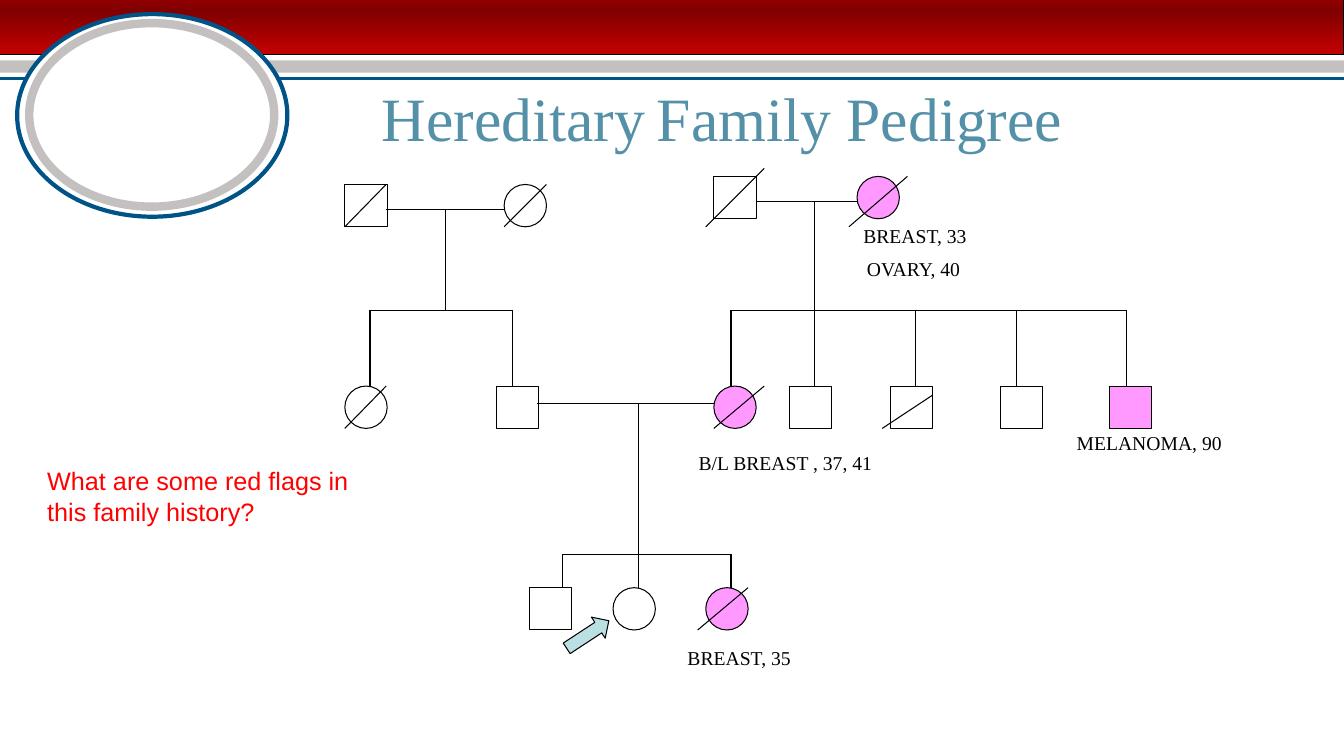
from copy import deepcopy
from dataclasses import dataclass

from lxml.etree import SubElement
from pptx import Presentation
from pptx.dml.color import RGBColor
from pptx.enum.shapes import MSO_CONNECTOR, MSO_SHAPE
from pptx.enum.text import PP_ALIGN
from pptx.oxml.ns import qn
from pptx.util import Inches, Pt


@dataclass(frozen=True)
class Theme:
    black: str = "000000"
    white: str = "FFFFFF"
    red: str = "C40101"
    mid_red: str = "900000"
    dark_red: str = "800000"
    grey: str = "C4C0C0"
    blue: str = "005387"
    affected: str = "FF99FF"
    arrow: str = "BBE0E3"
    title: str = "5490A8"
    question: str = "FF0000"
    serif: str = "Times New Roman"
    sans: str = "Arial"
    title_size: int = 44
    title_gap_size: int = 32
    question_size: int = 18
    label_size: int = 14
    thin: float = 0.75


THEME = Theme()
SYMBOL = 0.42
MALE, FEMALE = MSO_SHAPE.RECTANGLE, MSO_SHAPE.OVAL

# Sex, left, top, affected, slash of the deceased (x1, y1, x2, y2)
PEOPLE = [
    (MALE, 3.42, 1.83, False, (3.42, 2.25, 3.83, 1.83)),
    (FEMALE, 5, 1.83, False, (5, 2.25, 5.42, 1.83)),
    (MALE, 7.08, 1.75, False, (7, 2.25, 7.58, 1.67)),
    (FEMALE, 8.5, 1.75, True, (8.42, 2.25, 9, 1.75)),
    (FEMALE, 3.42, 3.83, False, (3.42, 4.25, 3.83, 3.83)),
    (MALE, 4.92, 3.83, False, None),
    (FEMALE, 7.08, 3.83, True, (7.08, 4.25, 7.58, 3.83)),
    (MALE, 7.83, 3.83, False, None),
    (MALE, 8.83, 3.83, False, (8.75, 4.25, 9.25, 3.92)),
    (MALE, 9.92, 3.83, False, None),
    (MALE, 11, 3.83, True, None),
    (MALE, 5.25, 5.83, False, None),
    (FEMALE, 6.08, 5.83, False, None),
    (FEMALE, 7, 5.83, True, (6.92, 6.25, 7.42, 5.83)),
]

# Couple (left, right, y), trunk x, sibling bar y, children x, children top
FAMILIES = [
    ((3.83, 5, 2.08), 4.42, 3.08, (3.67, 5.08), 3.83),
    ((7.5, 8.5, 2), 8.08, 3.08, (7.25, 8.08, 9.08, 10.08, 11.17), 3.83),
    ((5.33, 7.08, 4), 6.33, 5.5, (5.58, 6.33, 7.25), 5.83),
]

# Text, left, top, width, alignment
DIAGNOSES = [
    ("BREAST, 33", 8.4, 2.17, 1.35, PP_ALIGN.CENTER),
    ("OVARY, 40", 8.35, 2.5, 1.42, PP_ALIGN.CENTER),
    ("B/L BREAST , 37, 41", 6.83, 4.42, 2.08, PP_ALIGN.LEFT),
    ("MELANOMA, 90", 10.58, 4.23, 1.74, PP_ALIGN.LEFT),
    ("BREAST, 35", 6.72, 6.36, 1.25, PP_ALIGN.LEFT),
]


def color(code):
    return RGBColor.from_string(code)


def add_shape(page, kind, left, top, width, height, fill=None,
              line=THEME.black, weight=THEME.thin):
    shape = page.shapes.add_shape(
        kind, Inches(left), Inches(top), Inches(width), Inches(height))
    shape.shadow.inherit = False
    if fill:
        shape.fill.solid()
        shape.fill.fore_color.rgb = color(fill)
    else:
        shape.fill.background()
    if line:
        shape.line.color.rgb = color(line)
        shape.line.width = Pt(weight)
    else:
        shape.line.fill.background()
    return shape


def add_line(page, x1, y1, x2, y2, line=THEME.black, weight=THEME.thin):
    connector = page.shapes.add_connector(
        MSO_CONNECTOR.STRAIGHT, Inches(x1), Inches(y1), Inches(x2), Inches(y2))
    connector.line.color.rgb = color(line)
    connector.line.width = Pt(weight)
    SubElement(connector._element.spPr, qn("a:effectLst"))


def add_text(page, spans, left, top, width, height, font, ink,
             align=PP_ALIGN.LEFT):
    """Add one paragraph made of (text, size) spans."""
    box = page.shapes.add_textbox(
        Inches(left), Inches(top), Inches(width), Inches(height))
    box.text_frame.word_wrap = True
    para = box.text_frame.paragraphs[0]
    para.alignment = align
    for text, size in spans:
        span = para.add_run()
        span.text = text
        span.font.name = font
        span.font.size = Pt(size)
        span.font.color.rgb = color(ink)


def fill_gradient(shape, stops):
    """Fill from top to bottom with (position, colour) stops."""
    shape.fill.gradient()
    shape.fill.gradient_angle = 270
    stop_list = shape._element.spPr.find(".//" + qn("a:gsLst"))
    while len(stop_list) < len(stops):
        stop_list.append(deepcopy(stop_list[0]))
    for stop, (position, code) in zip(shape.fill.gradient_stops, stops):
        stop.position = position
        stop.color.rgb = color(code)


def add_header(page):
    banner = add_shape(page, MSO_SHAPE.RECTANGLE, 0, 0, 13.33, 0.54)
    fill_gradient(banner, [(0, THEME.mid_red), (0.2, THEME.dark_red),
                           (1, THEME.red)])
    add_shape(page, MSO_SHAPE.RECTANGLE, 0, 0.6, 13.33, 0.12, THEME.grey, None)
    add_line(page, 0, 0.78, 13.33, 0.78, THEME.blue, 2.25)
    add_shape(page, MSO_SHAPE.OVAL, 0.17, 0.14, 2.68, 2.01,
              THEME.white, THEME.blue, 3)
    add_shape(page, MSO_SHAPE.OVAL, 0.29, 0.23, 2.43, 1.82,
              THEME.white, THEME.grey, 6)


def add_family(page, couple, trunk, bar, children, children_top):
    left, right, couple_y = couple
    add_line(page, left, couple_y, right, couple_y)
    add_line(page, trunk, couple_y, trunk, bar)
    add_line(page, children[0], bar, children[-1], bar)
    for child in children:
        add_line(page, child, bar, child, children_top)


def add_person(page, sex, left, top, affected, slash):
    add_shape(page, sex, left, top, SYMBOL, SYMBOL,
              THEME.affected if affected else None)
    if slash:
        add_line(page, *slash)


def main():
    deck = Presentation()
    deck.slide_width, deck.slide_height = Inches(13.33), Inches(7.5)
    page = deck.slides.add_slide(deck.slide_layouts[6])

    add_header(page)
    add_text(page, [("Hereditary", THEME.title_size),
                    (" ", THEME.title_gap_size),
                    ("Family Pedigree", THEME.title_size)],
             3, 0.74, 8.33, 0.83, THEME.serif, THEME.title, PP_ALIGN.CENTER)
    for family in FAMILIES:
        add_family(page, *family)
    for person in PEOPLE:
        add_person(page, *person)
    for text, left, top, width, align in DIAGNOSES:
        add_text(page, [(text, THEME.label_size)], left, top, width, 0.34,
                 THEME.serif, THEME.black, align)

    proband_arrow = add_shape(page, MSO_SHAPE.RIGHT_ARROW,
                              5.58, 6.17, 0.5, 0.25, THEME.arrow)
    proband_arrow.rotation = 326.8
    add_text(page, [("What are some red flags in this family history?",
                     THEME.question_size)],
             0.37, 4.57, 3.3, 0.71, THEME.sans, THEME.question)

    deck.save("out.pptx")


if __name__ == "__main__":
    main()
